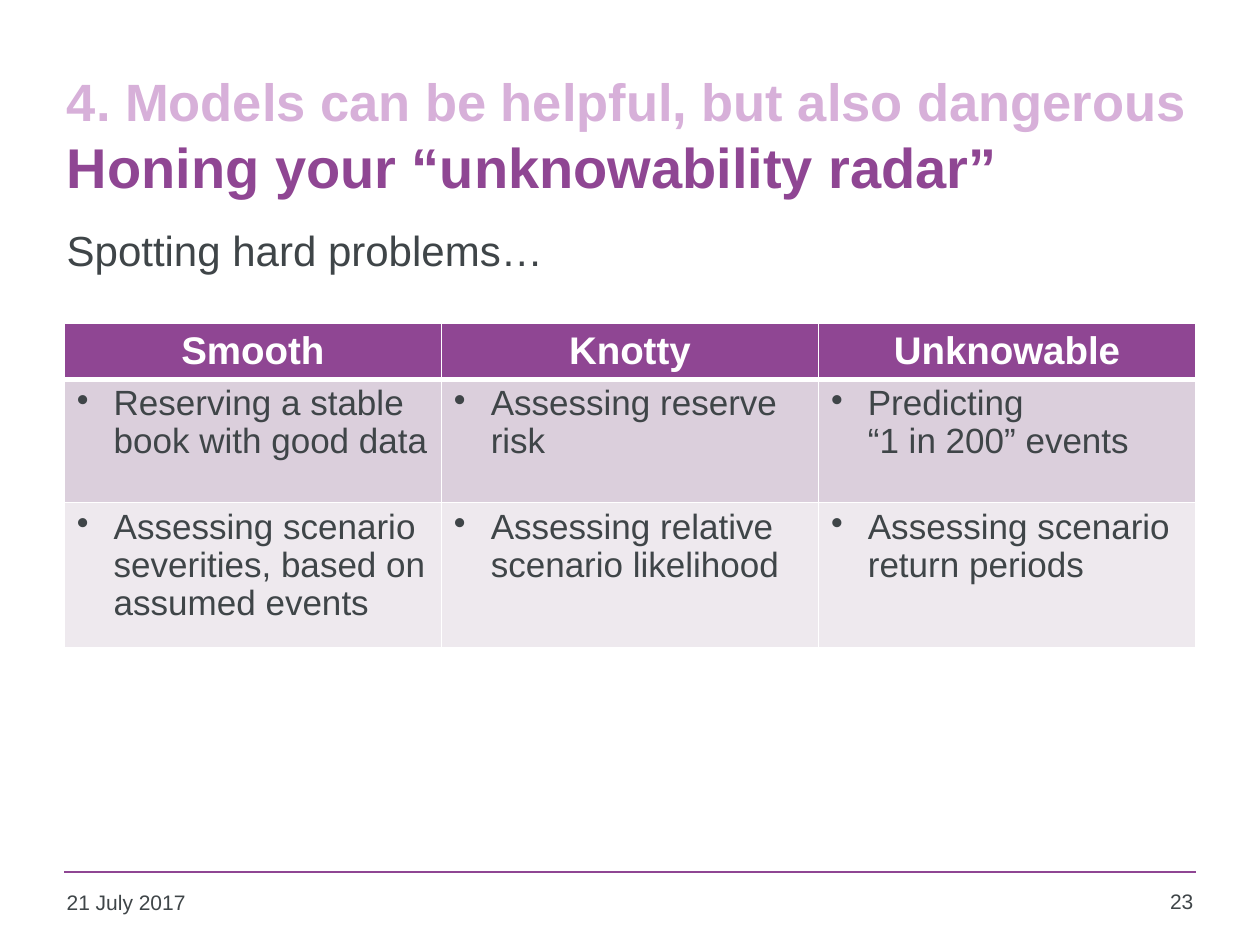
from dataclasses import dataclass
from typing import Optional

from lxml.etree import SubElement
from pptx import Presentation
from pptx.dml.color import RGBColor
from pptx.enum.shapes import MSO_CONNECTOR
from pptx.enum.text import MSO_ANCHOR, PP_ALIGN
from pptx.oxml import parse_xml
from pptx.oxml.ns import nsdecls, qn
from pptx.util import Pt


@dataclass(frozen=True)
class Theme:
    font: str = "Arial"
    purple: str = "8F4693"
    lilac: str = "D7B0D9"
    ink: str = "3F4548"
    white: str = "FFFFFF"
    bands: tuple = ("DBCFDC", "EEE9EE")
    section_size: float = 30
    title_size: float = 32
    lead_size: float = 24
    head_size: float = 22
    cell_size: float = 20
    foot_size: float = 12


@dataclass(frozen=True)
class Label:
    text: str
    left: float
    top: float
    width: float
    height: float
    size: float
    align: PP_ALIGN = PP_ALIGN.LEFT
    inset: float = 3.6


T = Theme()
MARGIN, TEXT_LEFT, CONTENT_WIDTH = 36.75, 31, 646.5
ROW_HEIGHTS = (32, 70.5, 83)
ROWS = (
    ("Smooth", "Knotty", "Unknowable"),
    ("Reserving a stable book with good data", "Assessing reserve risk",
     "Predicting \v“1 in 200” events"),
    ("Assessing scenario severities, based on assumed events",
     "Assessing relative scenario likelihood",
     "Assessing scenario return periods"),
)
LABELS = (
    Label("Spotting hard problems…", TEXT_LEFT, 122.4, 652.5, 85, T.lead_size, inset=6),
    Label("21 July 2017", TEXT_LEFT, 504.7, 158.4, 26, T.foot_size),
    Label("23", 638, 504, 51, 26.6, T.foot_size, PP_ALIGN.RIGHT),
)


def set_font(font, size: float, color: str, bold: bool = False) -> None:
    """Apply the theme typeface with a size, colour and weight."""
    font.name, font.size, font.bold = T.font, Pt(size), bold
    font.color.rgb = RGBColor.from_string(color)


def add_title(s) -> None:
    """Place the two-tone title in the layout's title placeholder."""
    sp = s.shapes.title
    sp.left, sp.top, sp.width, sp.height = Pt(TEXT_LEFT), Pt(31.7), Pt(658), Pt(90)
    tf = sp.text_frame
    tf.word_wrap, tf.vertical_anchor = True, MSO_ANCHOR.MIDDLE
    p = tf.paragraphs[0]
    p.alignment = PP_ALIGN.LEFT
    r = p.add_run()
    r.text = "4. Models can be helpful, but also dangerous"
    set_font(r.font, T.section_size, T.lilac, True)
    p.add_line_break()
    r = p.add_run()
    r.text = "Honing your “unknowability radar”"
    set_font(r.font, T.title_size, T.purple, True)


def add_label(s, label: Label) -> None:
    """Add one text box."""
    sp = s.shapes.add_textbox(Pt(label.left), Pt(label.top), Pt(label.width), Pt(label.height))
    tf = sp.text_frame
    tf.word_wrap, tf.margin_top = True, Pt(label.inset)
    p = tf.paragraphs[0]
    p.text, p.alignment = label.text, label.align
    set_font(p.font, label.size, T.ink)


def add_rule(s) -> None:
    """Draw the line above the footer."""
    y = Pt(498.2)
    cx = s.shapes.add_connector(MSO_CONNECTOR.STRAIGHT, Pt(MARGIN), y,
                                Pt(MARGIN + CONTENT_WIDTH), y)
    cx.line.width = Pt(1)
    cx.line.color.rgb = RGBColor.from_string(T.purple)
    SubElement(cx.element.spPr, qn("a:effectLst"))


def style_cell(cell, fill: str, top: float, bottom: float) -> None:
    """Fill a cell and give it white borders."""
    cell.fill.solid()
    cell.fill.fore_color.rgb = RGBColor.from_string(fill)
    tc_pr = cell._tc.get_or_add_tcPr()
    for i, (side, width) in enumerate(zip("LRTB", (1, 1, top, bottom))):
        tc_pr.insert(i, parse_xml(
            f'<a:ln{side} {nsdecls("a")} w="{Pt(width)}"><a:solidFill>'
            f'<a:srgbClr val="{T.white}"/></a:solidFill></a:ln{side}>'))


def add_bullet(p, indent: Optional[float] = 21) -> None:
    """Give a paragraph a hanging bullet."""
    p_pr = p._p.get_or_add_pPr()
    p_pr.set("marL", str(Pt(indent)))
    p_pr.set("indent", str(-Pt(indent)))
    bullet = parse_xml(f'<a:buChar {nsdecls("a")} char="•"/>')
    p_pr.insert_element_before(bullet, "a:tabLst", "a:defRPr", "a:extLst")


def add_problem_table(s) -> None:
    """Build the table of problem types and examples."""
    frame = s.shapes.add_table(len(ROWS), len(ROWS[0]), Pt(MARGIN), Pt(184.8),
                               Pt(CONTENT_WIDTH), Pt(sum(ROW_HEIGHTS)))
    table = frame.table
    table.horz_banding = False
    for i, (texts, height) in enumerate(zip(ROWS, ROW_HEIGHTS)):
        table.rows[i].height = Pt(height)
        for j, text in enumerate(texts):
            cell = table.cell(i, j)
            p = cell.text_frame.paragraphs[0]
            p.text = text
            if i == 0:
                p.alignment = PP_ALIGN.CENTER
                set_font(p.font, T.head_size, T.white, True)
                style_cell(cell, T.purple, 1, 3)
            else:
                p.space_before = p.space_after = Pt(6)
                p.line_spacing = 0.97
                set_font(p.font, T.cell_size, T.ink)
                add_bullet(p)
                style_cell(cell, T.bands[i - 1], 3 if i == 1 else 1, 1)


def main() -> None:
    """Build and save the slide."""
    prs = Presentation()
    prs.slide_width, prs.slide_height = Pt(720), Pt(540)
    s = prs.slides.add_slide(prs.slide_layouts[5])
    add_rule(s)
    add_title(s)
    add_problem_table(s)
    for label in LABELS:
        add_label(s, label)
    prs.save("out.pptx")


if __name__ == "__main__":
    main()
